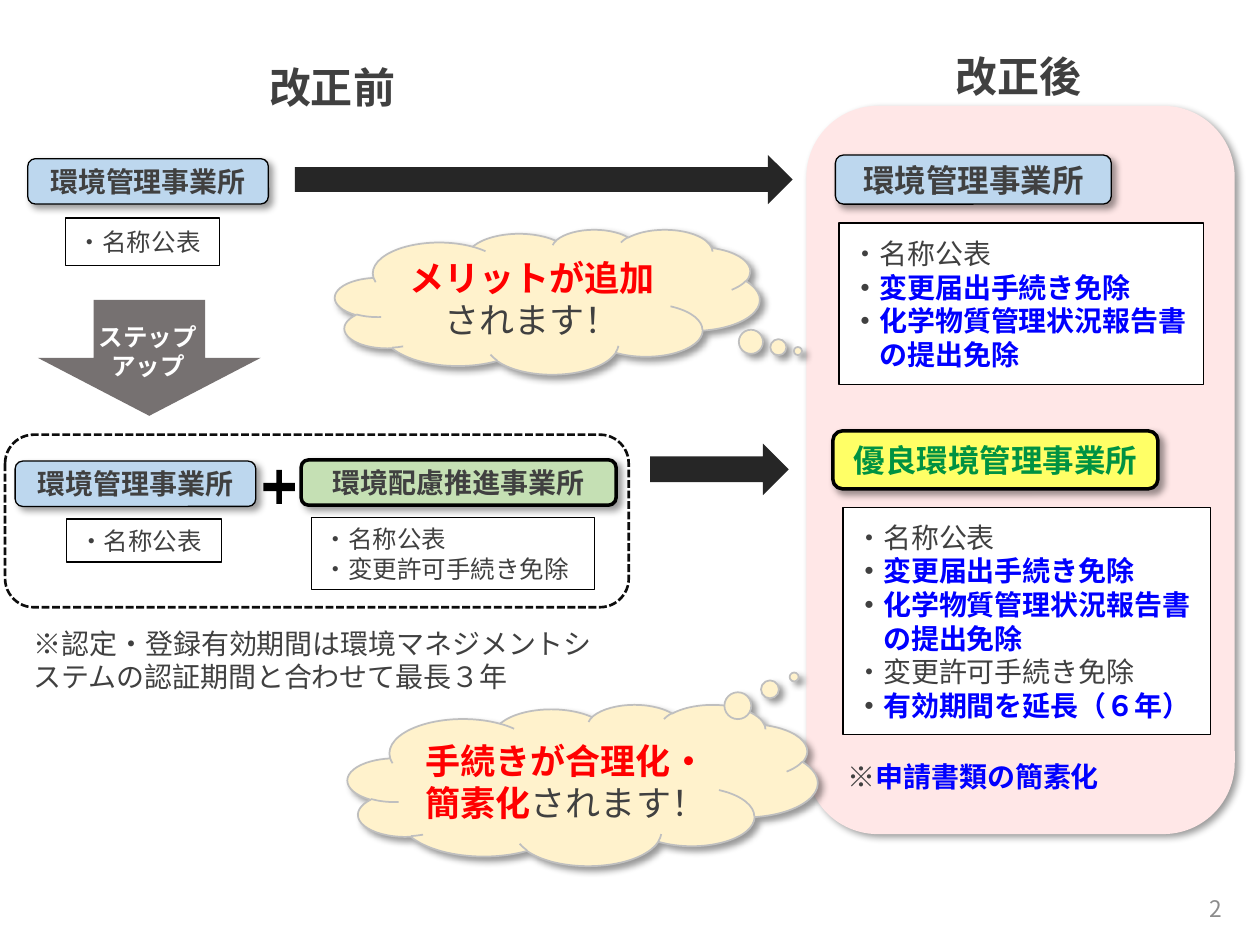
from lxml import etree
from pptx import Presentation
from pptx.dml.color import RGBColor
from pptx.enum.dml import MSO_LINE
from pptx.enum.shapes import MSO_SHAPE
from pptx.enum.text import MSO_ANCHOR, PP_ALIGN
from pptx.oxml.ns import qn
from pptx.util import Inches, Pt

FONT = "Noto Sans CJK JP"
COLORS = {
    "text": "404040", "blue text": "0000FF", "red text": "FF0000", "green text": "009242",
    "white": "FFFFFF", "black": "000000", "number": "8C8C8C", "panel": "FFE7E7",
    "blue": "BDD7EE", "green": "C5E0B4", "yellow": "FFFF66", "dash": "0D0D0D",
    "step": "767171", "arrow": "262626", "cloud": "FFF2CC", "cloud line": "BFBFBF",
}
NAME = "・名称公表"
PERMIT = "・変更許可手続き免除"
OFFICE = "環境管理事業所"


def color(name):
    return RGBColor.from_string(COLORS[name])


def write(shape, paragraphs, size, align=PP_ALIGN.LEFT, anchor=MSO_ANCHOR.MIDDLE):
    """Fill a shape with paragraphs, each a list of (text, colour, bold) spans."""
    frame = shape.text_frame
    frame.word_wrap = True
    frame.vertical_anchor = anchor
    for index, spans in enumerate(paragraphs):
        para = frame.paragraphs[0] if index == 0 else frame.add_paragraph()
        para.alignment = align
        for text, text_color, bold in spans:
            span = para.add_run()
            span.text = text
            span.font.size = Pt(size)
            span.font.bold = bold
            span.font.name = FONT
            east_asian = etree.SubElement(span.font._element, qn("a:ea"))
            east_asian.set("typeface", FONT)
            span.font.color.rgb = color(text_color)


def add_text(page, box, paragraphs, size, align=PP_ALIGN.LEFT, anchor=MSO_ANCHOR.MIDDLE):
    shape = page.shapes.add_textbox(*map(Inches, box))
    write(shape, paragraphs, size, align, anchor)


def add_shadow(shape):
    effects = shape._element.spPr.find(qn("a:effectLst"))
    shadow = etree.SubElement(effects, qn("a:outerShdw"), blurRad=str(Pt(4)), dist=str(Pt(3)),
                              dir="2700000", algn="tl", rotWithShape="0")
    shade = etree.SubElement(shadow, qn("a:srgbClr"), val=COLORS["black"])
    etree.SubElement(shade, qn("a:alpha"), val="40000")


def add_shape(page, kind, box, fill=None, line=None, width=0.75, shadow=False):
    shape = page.shapes.add_shape(kind, *map(Inches, box))
    shape.shadow.inherit = False
    if fill:
        shape.fill.solid()
        shape.fill.fore_color.rgb = color(fill)
    else:
        shape.fill.background()
    if line:
        shape.line.color.rgb = color(line)
        shape.line.width = Pt(width)
    else:
        shape.line.fill.background()
    if shadow:
        add_shadow(shape)
    return shape


def add_badge(page, box, label, fill="blue", size=16, text_color="text", width=0.75):
    badge = add_shape(page, MSO_SHAPE.ROUNDED_RECTANGLE, box, fill, "black", width, shadow=True)
    write(badge, [[(label, text_color, True)]], size, PP_ALIGN.CENTER)


def add_benefits(page, box, paragraphs, size):
    card = add_shape(page, MSO_SHAPE.RECTANGLE, box, "white", "black")
    write(card, paragraphs, size)


def plain(text):
    return [(text, "text", False)]


def added(text, marker="・"):
    """A benefit that is new after the revision."""
    return [(marker, "text", True), (text, "blue text", True)]


def add_title(page, box, label):
    add_text(page, box, [[(label, "text", True)]], 24, PP_ALIGN.CENTER)


def add_step_up(page, box):
    left, top, width, height = box
    add_shape(page, MSO_SHAPE.DOWN_ARROW, box, "step")
    label = [[(line, "white", True)] for line in ("ステップ", "アップ")]
    add_text(page, (left + 0.07, top + 0.23, width - 0.16, 0.35), label, 14, PP_ALIGN.CENTER)


def add_before(page, box):
    left, top = box[:2]
    add_title(page, (left + 1.79, top, 1.61, 0.49), "改正前")
    add_badge(page, (left + 0.18, top + 0.82, 1.91, 0.36), OFFICE)
    add_benefits(page, (left + 0.48, top + 1.29, 1.22, 0.38), [plain(NAME)], 14)
    add_step_up(page, (left + 0.26, top + 1.94, 1.77, 0.92))
    add_shape(page, MSO_SHAPE.ROUNDED_RECTANGLE, (left, top + 3.01, 4.95, 1.37),
              line="dash", width=1.5).line.dash_style = MSO_LINE.SQUARE_DOT
    add_badge(page, (left + 0.08, top + 3.22, 1.91, 0.36), OFFICE)
    add_benefits(page, (left + 0.49, top + 3.68, 1.23, 0.34), [plain(NAME)], 14)
    plus = add_shape(page, MSO_SHAPE.CROSS, (left + 2.05, top + 3.29, 0.25, 0.27), "black")
    plus.adjustments[0] = 0.41
    add_badge(page, (left + 2.35, top + 3.21, 2.5, 0.36), "環境配慮推進事業所", "green", width=2)
    add_benefits(page, (left + 2.43, top + 3.67, 2.25, 0.57), [plain(NAME), plain(PERMIT)], 14)
    note = "※認定・登録有効期間は環境マネジメントシステムの認証期間と合わせて最長３年"
    add_text(page, (left + 0.13, top + 4.48, 4.75, 0.62), [plain(note)], 16, anchor=MSO_ANCHOR.TOP)


def add_after(page, box):
    left, top = box[:2]
    add_shape(page, MSO_SHAPE.ROUNDED_RECTANGLE, box, "panel", shadow=True)
    add_title(page, (left + 0.91, top - 0.49, 1.55, 0.5), "改正後")
    common = [plain(NAME), added("変更届出手続き免除"), added("化学物質管理状況報告書"),
              [("　の提出免除", "blue text", True)]]
    add_badge(page, (left + 0.23, top + 0.39, 2.19, 0.39), OFFICE, size=18)
    add_benefits(page, (left + 0.26, top + 0.93, 2.89, 1.28), common, 16)
    add_badge(page, (left + 0.21, top + 2.58, 2.58, 0.46), "優良環境管理事業所", "yellow", 18,
              "green text", 2)
    add_benefits(page, (left + 0.29, top + 3.19, 2.92, 1.8),
                 common + [plain(PERMIT), added("有効期間を延長（６年）")], 16)
    add_text(page, (left + 0.23, top + 5.14, 2.89, 0.4), [added("申請書類の簡素化", "※")], 16,
             anchor=MSO_ANCHOR.TOP)


def add_cloud(page, box, tail, highlight):
    cloud = add_shape(page, MSO_SHAPE.CLOUD_CALLOUT, box, "cloud", "cloud line", 1, shadow=True)
    for index, value in enumerate(tail):
        cloud.adjustments[index] = value
    spans = [(highlight, "red text", True), ("されます！", "text", False)]
    write(cloud, [spans], 20, PP_ALIGN.CENTER)


def main():
    deck = Presentation()
    deck.slide_width, deck.slide_height = Inches(10), Inches(7.5)
    page = deck.slides.add_slide(deck.slide_layouts[6])
    add_before(page, (0.04, 0.44, 4.95, 5.1))
    add_after(page, (6.4, 0.84, 3.4, 5.78))
    for box in ((2.34, 1.23, 3.95, 0.39), (5.16, 3.52, 1.1, 0.41)):
        add_shape(page, MSO_SHAPE.RIGHT_ARROW, box, "arrow")
    add_cloud(page, (2.66, 1.82, 3.37, 1.15), (0.59, 0.34), "メリットが追加")
    add_cloud(page, (2.76, 5.59, 3.73, 1.28), (0.45, -0.67), "手続きが合理化・簡素化")
    add_text(page, (7.55, 7.01, 2.25, 0.4), [[("2", "number", False)]], 13, PP_ALIGN.RIGHT)
    deck.save("out.pptx")


if __name__ == "__main__":
    main()
